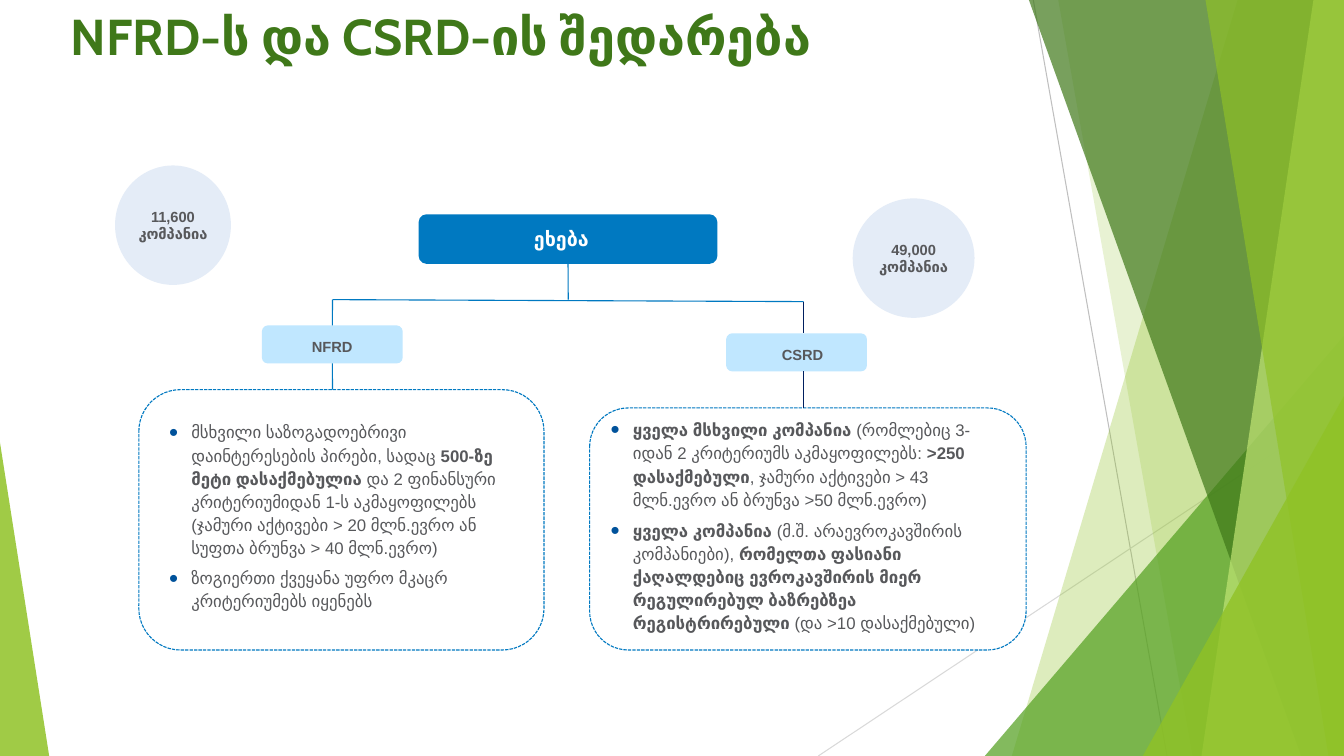
from dataclasses import dataclass

from lxml import etree
from pptx import Presentation
from pptx.dml.color import RGBColor
from pptx.enum.dml import MSO_LINE
from pptx.enum.shapes import MSO_CONNECTOR, MSO_SHAPE
from pptx.enum.text import MSO_ANCHOR, MSO_AUTO_SIZE, PP_ALIGN
from pptx.oxml.ns import qn
from pptx.util import Cm, Pt

STRAIGHT = MSO_CONNECTOR.STRAIGHT
ROUNDED = MSO_SHAPE.ROUNDED_RECTANGLE
OVAL = MSO_SHAPE.OVAL
TRIANGLE = MSO_SHAPE.ISOSCELES_TRIANGLE
DASHED = MSO_LINE.SQUARE_DOT
LEFT, CENTER = PP_ALIGN.LEFT, PP_ALIGN.CENTER
TOP, MIDDLE = MSO_ANCHOR.TOP, MSO_ANCHOR.MIDDLE
NO_AUTOFIT = MSO_AUTO_SIZE.NONE
SIDE_TOP, SIDE_BOTTOM = 0, 2
WIDTH, HEIGHT = 33.87, 19.05


@dataclass(frozen=True)
class Theme:
    """Colours, fonts and type sizes of the slide."""
    forest: str = "3F7819"
    lime: str = "90C226"
    grass: str = "54A021"
    pale_lime: str = "C0E474"
    grey_dark: str = "BFBFBF"
    grey_light: str = "D9D9D9"
    blue: str = "0079C1"
    navy: str = "001F5F"
    sky: str = "C0E7FF"
    mist: str = "E4ECF7"
    bullet: str = "00529B"
    white: str = "FFFFFF"
    ink: str = "57585B"
    title_font: str = "Cabin"
    body_font: str = "Arial"
    title_size: float = 36
    root_size: float = 14
    label_size: float = 10.5
    list_size: float = 12
    hairline: float = 0.75
    stroke: float = 0.8


THEME = Theme()

NFRD_RULES = [
    (1.15, 1.2, [("მსხვილი საზოგადოებრივი დაინტერესების პირები, სადაც ", False),
                 ("500-ზე მეტი დასაქმებულია ", True),
                 ("და 2 ფინანსური კრიტერიუმიდან 1-ს აკმაყოფილებს "
                  "(ჯამური აქტივები > 20 მლნ.ევრო ან სუფთა ბრუნვა > 40 მლნ.ევრო)", False)]),
    (1.11, 5.6, [("ზოგიერთი ქვეყანა უფრო მკაცრ კრიტერიუმებს იყენებს", False)]),
]
CSRD_RULES = [
    (1.17, 1, [("ყველა მსხვილი კომპანია ", True),
               ("(რომლებიც 3-იდან 2 კრიტერიუმს აკმაყოფილებს: ", False),
               (">250 დასაქმებული", True),
               (", ჯამური აქტივები > 43 მლნ.ევრო ან ბრუნვა >50 მლნ.ევრო)", False)]),
    (1.15, 5.1, [("ყველა კომპანია ", True),
                 ("(მ.შ. არაევროკავშირის კომპანიები), ", False),
                 ("რომელთა ფასიანი ქაღალდებიც ევროკავშირის მიერ "
                  "რეგულირებულ ბაზრებზეა რეგისტრირებული", True),
                 (" (და >10 დასაქმებული)", False)]),
]


def style_run(run, size, color, bold, font=THEME.body_font):
    """Set the type of one run."""
    run.font.name = font
    run.font.size = Pt(size)
    run.font.bold = bold
    run.font.color.rgb = RGBColor.from_string(color)


def set_frame(frame, anchor, left=0, top=0, right=0):
    """Set wrapping, anchor and insets of a text frame."""
    frame.word_wrap = True
    frame.auto_size = NO_AUTOFIT
    frame.vertical_anchor = anchor
    frame.margin_left, frame.margin_top = Cm(left), Cm(top)
    frame.margin_right, frame.margin_bottom = Cm(right), Cm(0)


def place(shape, left, top, width, height):
    """Move and size a placeholder."""
    shape.left, shape.top = Cm(left), Cm(top)
    shape.width, shape.height = Cm(width), Cm(height)


def paint(shape, color, opacity=100):
    """Give a shape a plain fill without line or shadow."""
    shape.shadow.inherit = False
    shape.line.fill.background()
    shape.fill.solid()
    shape.fill.fore_color.rgb = RGBColor.from_string(color)
    if opacity < 100:
        tint = shape.element.spPr.find(qn("a:solidFill")).find(qn("a:srgbClr"))
        etree.SubElement(tint, qn("a:alpha")).set("val", str(opacity * 1000))


def add_line(slide, start, end, color, width=THEME.stroke):
    """Draw a straight line between two points."""
    line = slide.shapes.add_connector(STRAIGHT, *(Cm(v) for v in (*start, *end)))
    line.line.color.rgb = RGBColor.from_string(color)
    line.line.width = Pt(width)
    etree.SubElement(line.element.spPr, qn("a:effectLst"))
    return line


def add_shard(slide, top_x, bottom_x, color, opacity):
    """Draw a band from a slanted edge to the right side of the slide."""
    corners = [(WIDTH, 0), (WIDTH, HEIGHT), (bottom_x, HEIGHT)]
    outline = slide.shapes.build_freeform(Cm(top_x), Cm(0))
    outline.add_line_segments([(Cm(x), Cm(y)) for x, y in corners], close=True)
    paint(outline.convert_to_shape(), color, opacity)


def add_wedge(slide, left, top, width, peak, color, opacity):
    """Draw a triangle that stands on the bottom edge."""
    wedge = slide.shapes.add_shape(TRIANGLE, Cm(left), Cm(top), Cm(width), Cm(HEIGHT - top))
    wedge.adjustments[0] = peak
    paint(wedge, color, opacity)


def add_box(slide, kind, box, fill, text="", size=THEME.label_size, color=THEME.ink, **insets):
    """Draw a filled shape with centred bold text."""
    shape = slide.shapes.add_shape(kind, *(Cm(v) for v in box))
    if kind == ROUNDED:
        shape.adjustments[0] = 0.16
    paint(shape, fill)
    if text:
        set_frame(shape.text_frame, MIDDLE, **insets)
        shape.text_frame.text = text
        for paragraph in shape.text_frame.paragraphs:
            paragraph.alignment = CENTER
            style_run(paragraph.runs[0], size, color, True)
    return shape


def add_panel(slide, box):
    """Draw a white panel with a dashed border."""
    panel = add_box(slide, ROUNDED, box, THEME.white)
    panel.line.color.rgb = RGBColor.from_string(THEME.blue)
    panel.line.width = Pt(THEME.stroke)
    panel.line.dash_style = DASHED


def set_bullet(paragraph):
    """Give a paragraph a large coloured bullet and a hanging indent."""
    props = paragraph._p.get_or_add_pPr()
    props.set("marL", str(Cm(0.58)))
    props.set("indent", str(Cm(-0.56)))
    tint = etree.SubElement(props, qn("a:buClr"))
    etree.SubElement(tint, qn("a:srgbClr")).set("val", THEME.bullet)
    etree.SubElement(props, qn("a:buSzPct")).set("val", "154000")
    etree.SubElement(props, qn("a:buFont")).set("typeface", THEME.body_font)
    etree.SubElement(props, qn("a:buChar")).set("char", "•")


def fill_list(body, box, rules):
    """Write a bulleted list into a body placeholder above the panels."""
    place(body, *box)
    body.element.getparent().append(body.element)
    frame = body.text_frame
    set_frame(frame, TOP, top=0.04)
    for index, (spacing, before, parts) in enumerate(rules):
        paragraph = frame.add_paragraph() if index else frame.paragraphs[0]
        paragraph.alignment = LEFT
        paragraph.line_spacing = spacing
        paragraph.space_before = Pt(before)
        set_bullet(paragraph)
        for text, bold in parts:
            run = paragraph.add_run()
            run.text = text
            style_run(run, THEME.list_size, THEME.ink, bold)


def fill_title(title, text):
    """Write the slide title."""
    place(title, 0, 0, 23.88, 1.68)
    set_frame(title.text_frame, TOP, left=1.78, top=0.13)
    title.text_frame.text = text
    heading = title.text_frame.paragraphs[0]
    heading.alignment = LEFT
    heading.space_before = Pt(1.1)
    style_run(heading.runs[0], THEME.title_size, THEME.forest, True, THEME.title_font)


def add_backdrop(slide):
    """Draw the green facets and thin lines at the slide edges."""
    add_line(slide, (26.04, 0), (29.41, HEIGHT), THEME.grey_dark, THEME.hairline)
    add_line(slide, (WIDTH, 10.24), (20.62, HEIGHT), THEME.grey_light, THEME.hairline)
    add_shard(slide, 31.19, 25.5, THEME.lime, 30)
    add_shard(slide, 26.67, 30.05, THEME.lime, 20)
    add_wedge(slide, 24.82, 8.46, 9.05, 1, THEME.grass, 72)
    add_shard(slide, 25.93, 32.79, THEME.forest, 70)
    add_shard(slide, 33.1, 30.28, THEME.pale_lime, 70)
    add_shard(slide, 30.38, 33.48, THEME.lime, 65)
    add_wedge(slide, 28.8, 9.98, 5.07, 1, THEME.lime, 80)
    add_wedge(slide, 0, 11.15, 1.24, 0, THEME.lime, 85)


def add_tree(slide):
    """Draw the comparison tree with its panels and company counts."""
    root = add_box(slide, ROUNDED, (10.55, 5.4, 7.53, 1.25), THEME.blue, "ეხება",
                   THEME.root_size, THEME.white, right=0.33)
    nfrd = add_box(slide, ROUNDED, (6.6, 8.2, 3.55, 0.96), THEME.sky, "NFRD", top=0.1)
    add_box(slide, ROUNDED, (18.3, 8.4, 3.55, 0.96), THEME.sky, "CSRD", left=0.3, top=0.1)
    add_panel(slide, (3.5, 9.82, 10.21, 6.56))
    add_panel(slide, (14.86, 10.28, 11, 6.1))
    add_box(slide, OVAL, (2.9, 4.17, 2.92, 3.01), THEME.mist, "11,600\nკომპანია")
    add_box(slide, OVAL, (21.49, 5, 3.07, 3.01), THEME.mist, "49,000\nკომპანია")

    add_line(slide, (14.32, 6.65), (14.32, 7.55), THEME.blue).begin_connect(root, SIDE_BOTTOM)
    add_line(slide, (8.38, 7.55), (20.25, 7.6), THEME.blue)
    add_line(slide, (8.38, 7.55), (8.38, 8.2), THEME.blue).end_connect(nfrd, SIDE_TOP)
    add_line(slide, (8.38, 9.16), (8.38, 9.82), THEME.blue).begin_connect(nfrd, SIDE_BOTTOM)
    for start, end in ((7.6, 8.4), (9.36, 10.28)):
        add_line(slide, (20.25, start), (20.25, end), THEME.navy)


def main():
    """Build the slide and save it."""
    deck = Presentation()
    deck.slide_width, deck.slide_height = Cm(WIDTH), Cm(HEIGHT)
    slide = deck.slides.add_slide(deck.slide_layouts[3])
    title, nfrd_list, csrd_list = slide.placeholders
    add_backdrop(slide)
    fill_title(title, "NFRD-ს და CSRD-ის შედარება")
    add_tree(slide)
    fill_list(nfrd_list, (4.24, 10.52, 9.02, 4.93), NFRD_RULES)
    fill_list(csrd_list, (15.37, 10.44, 9.91, 5.56), CSRD_RULES)
    deck.save("out.pptx")


if __name__ == "__main__":
    main()
